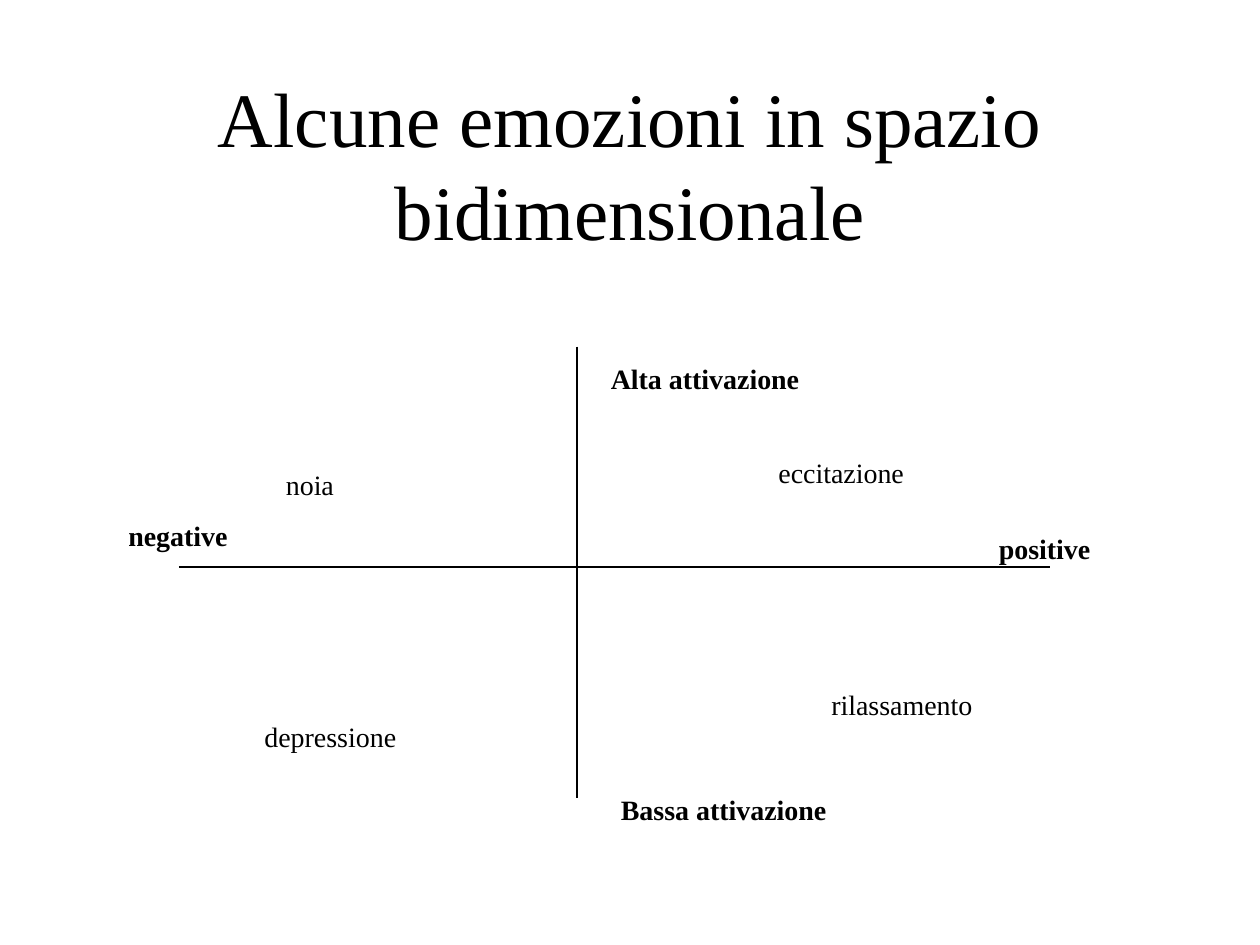
"""Build a slide placing emotions on the valence and activation axes."""
import pptx
import pptx.dml.color
import pptx.enum.shapes
import pptx.enum.text
import pptx.oxml.ns
import pptx.util
from lxml import etree

Inches = pptx.util.Inches
COLORS = {"ink": "000000"}
INK = pptx.dml.color.RGBColor.from_string(COLORS["ink"])
FONT = "Times New Roman"

deck = pptx.Presentation()
deck.slide_width = Inches(10)
deck.slide_height = Inches(7.5)
slide = deck.slides.add_slide(deck.slide_layouts[6])


def add_text(words, left, top, width, height, size, bold=False):
    box = slide.shapes.add_textbox(Inches(left), Inches(top), Inches(width), Inches(height))
    box.text_frame.word_wrap = True
    run = box.text_frame.paragraphs[0].add_run()
    run.text = words
    run.font.name = FONT
    run.font.size = pptx.util.Pt(size)
    run.font.bold = bold
    run.font.color.rgb = INK
    return box.text_frame


title = add_text("Alcune emozioni in spazio bidimensionale", 0.75, 0.67, 8.5, 1.25, 44)
title.vertical_anchor = pptx.enum.text.MSO_ANCHOR.MIDDLE
title.paragraphs[0].alignment = pptx.enum.text.PP_ALIGN.CENTER

valence_axis = (1.42, 4.5, 8.33, 4.5)
activation_axis = (4.58, 2.75, 4.58, 6.33)
for ends in (valence_axis, activation_axis):
    axis = slide.shapes.add_connector(
        pptx.enum.shapes.MSO_CONNECTOR.STRAIGHT, *[Inches(end) for end in ends]
    )
    axis.line.color.rgb = INK
    axis.line.width = pptx.util.Pt(0.75)
    etree.SubElement(axis._element.spPr, pptx.oxml.ns.qn("a:effectLst"))

axis_labels = [
    ("negative", 0.92, 4.07, 1.33),
    ("positive", 7.83, 4.17, 1.17),
    ("Bassa attivazione", 4.83, 6.24, 2),
    ("Alta attivazione", 4.75, 2.82, 1.83),
]
emotions = [
    ("rilassamento", 6.5, 5.41, 1.83),
    ("noia", 2.17, 3.66, 1.75),
    ("eccitazione", 6.08, 3.57, 1.33),
    ("depressione", 2, 5.66, 1.42),
]
for labels, bold in ((axis_labels, True), (emotions, False)):
    for words, left, top, width in labels:
        label = add_text(words, left, top, width, 0.37, 16, bold)
        label.auto_size = pptx.enum.text.MSO_AUTO_SIZE.SHAPE_TO_FIT_TEXT

deck.save("out.pptx")
